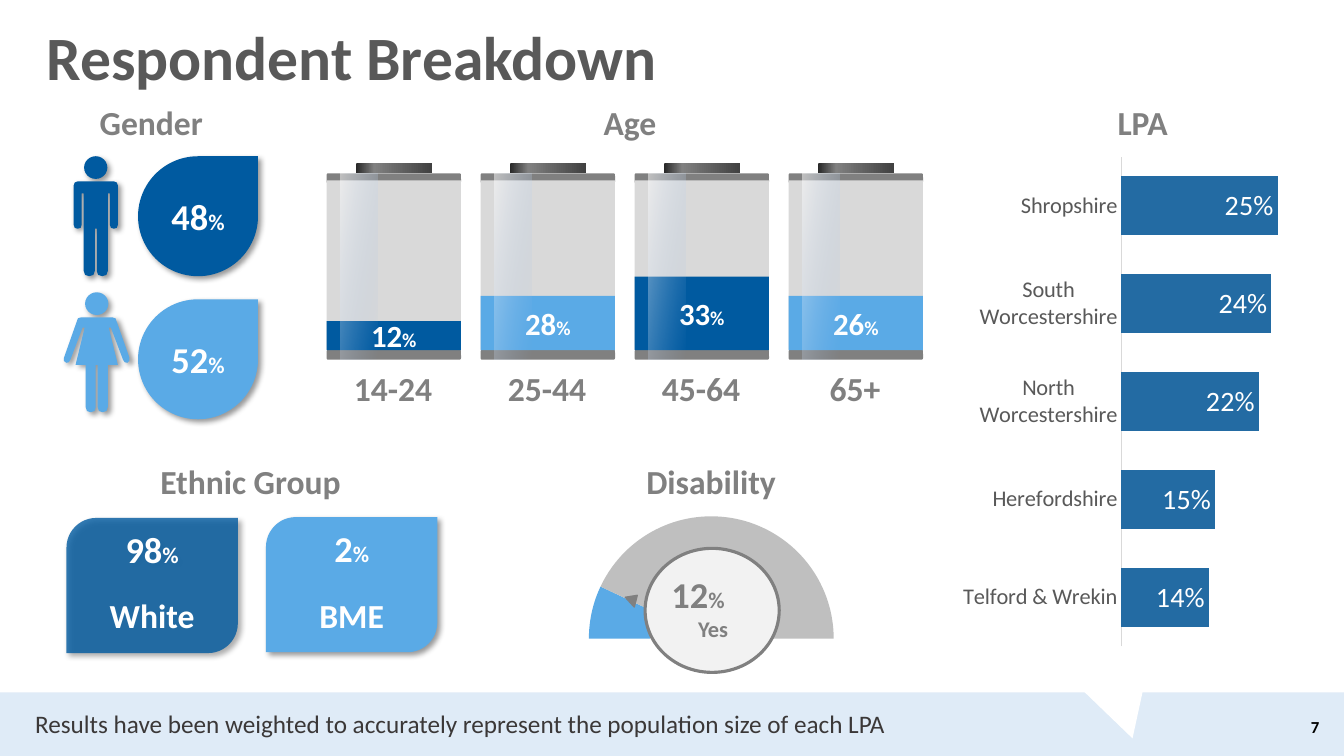
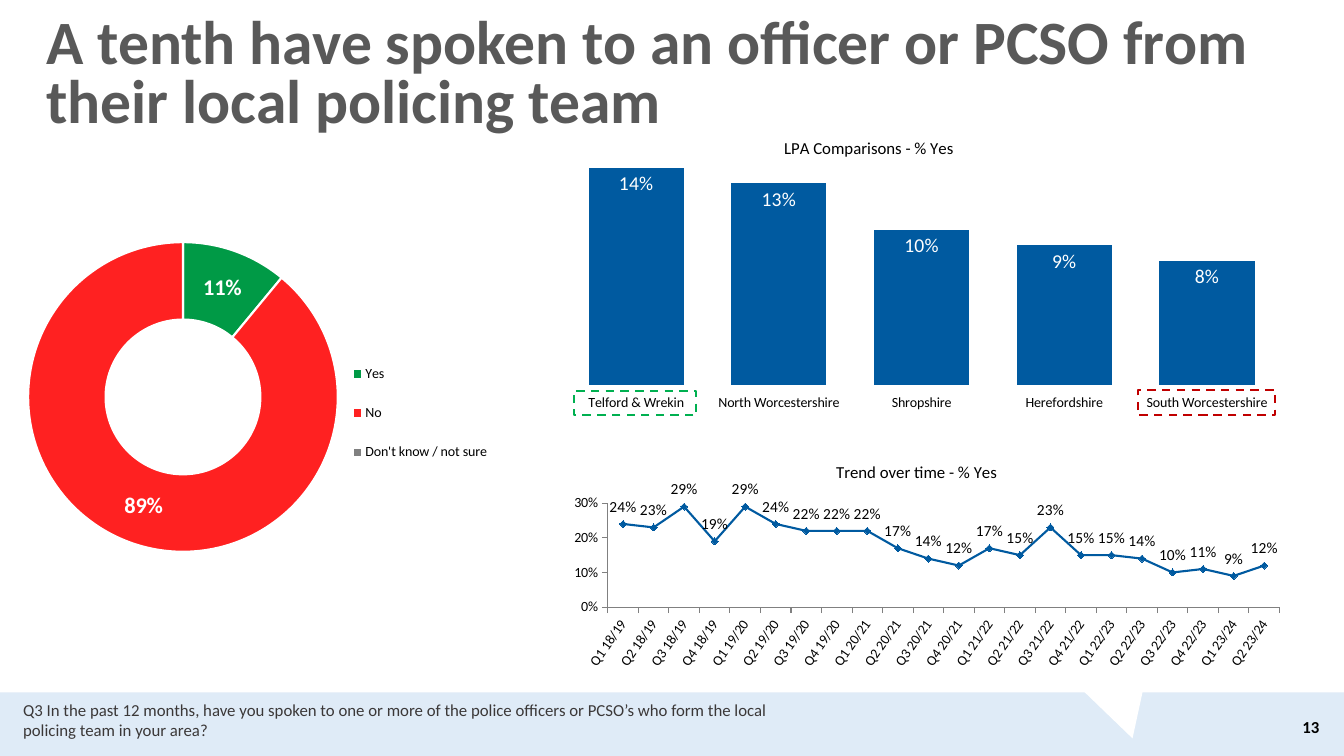
"""Build the two survey slides: respondent breakdown and local contact."""
from lxml.etree import SubElement
from pptx import Presentation
from pptx.chart.data import CategoryChartData
from pptx.dml.color import RGBColor
from pptx.enum.chart import XL_CHART_TYPE as CHART
from pptx.enum.chart import XL_LABEL_POSITION as SPOT
from pptx.enum.chart import XL_LEGEND_POSITION, XL_MARKER_STYLE
from pptx.enum.chart import XL_TICK_MARK as TICK
from pptx.enum.dml import MSO_LINE
from pptx.enum.shapes import MSO_SHAPE as SHAPE
from pptx.enum.text import MSO_ANCHOR, MSO_AUTO_SIZE, PP_ALIGN
from pptx.oxml.ns import qn
from pptx.util import Pt

FONT = "Calibri"
HEX = {
    "navy": "005AA0", "sky": "5AAAE6", "steel": "236BA3", "band": "DFEBF7",
    "grey": "808080", "slate": "595959", "ink": "3B3838", "silver": "BFBFBF",
    "pale": "D9D9D9", "mist": "F2F2F2", "white": "FFFFFF", "black": "000000",
    "yes": "009A46", "no": "FF2121", "best": "00B050", "worst": "C00000",
    "coal": "262626", "soot": "404040", "glass": "8EB4E3",
}
MAN = [(13, 0), (15, 0.8), (15.8, 2.9), (15.8, 31), (15, 33.2), (13, 33.8),
       (10.8, 33.2), (10.1, 31), (10.1, 8.6), (8.6, 8.6), (8.6, 64),
       (7.6, 66.8), (4.7, 67.7), (1.7, 66.8), (0.7, 64), (0.7, 33.8)]
WOMAN = [(11.5, 0), (13.4, 0.6), (14, 2.2), (23.4, 28.8), (23.4, 31),
         (21.8, 32.4), (20, 32), (18.8, 30.2), (10.1, 7.2), (8.6, 7.2),
         (15.1, 33.8), (7.9, 33.8), (7.9, 64), (7, 66.8), (4.3, 67.7),
         (1.5, 66.8), (0.7, 64), (0.7, 33.8)]


def tint(name):
    return RGBColor.from_string(HEX[name])


def style(font, size, color="black", bold=False):
    font.name, font.size, font.bold = FONT, Pt(size), bold
    font.color.rgb = tint(color)


def write(frame, text, size=24, color="grey", bold=True, small=None,
          align=PP_ALIGN.CENTER, anchor=MSO_ANCHOR.MIDDLE, pad=None, lead=None):
    frame.word_wrap = True
    frame.auto_size = MSO_AUTO_SIZE.NONE
    frame.vertical_anchor = anchor
    if pad is not None:
        frame.margin_left = frame.margin_right = Pt(pad)
        frame.margin_top = frame.margin_bottom = Pt(pad)
    para = frame.paragraphs[0]
    para.alignment = align
    if lead:
        para.line_spacing = lead
    parts = [(text.rstrip("%"), size), ("%", small)] if small else [(text, size)]
    for words, points in parts:
        run = para.add_run()
        run.text = words
        style(run.font, points, color, bold)


def blend(shape, stops, angle):
    shape.fill.gradient()
    grad = shape.element.spPr.find(qn("a:gradFill"))
    stop_list = grad.find(qn("a:gsLst"))
    for old in list(stop_list):
        stop_list.remove(old)
    for at, color, alpha in stops:
        stop = SubElement(stop_list, qn("a:gs"), pos=str(at * 1000))
        hue = SubElement(stop, qn("a:srgbClr"), val=HEX[color])
        SubElement(hue, qn("a:alpha"), val=str(alpha * 1000))
    grad.find(qn("a:lin")).set("ang", str(angle * 60000))


def place(node, spot, index=0, inner=False):
    layout = node.find(qn("c:layout"))
    if layout is None:
        layout = SubElement(node, qn("c:layout"))
        node.insert(index, layout)
    manual = SubElement(layout, qn("c:manualLayout"))
    if inner:
        SubElement(manual, qn("c:layoutTarget"), val="inner")
    for key in ("xMode", "yMode"):
        SubElement(manual, qn("c:" + key), val="edge")
    for key, value in zip("xywh", spot):
        SubElement(manual, qn("c:" + key), val=str(value))


def label(chart, size, color="black", bold=False, spot=None):
    tags = chart.plots[0].series[0].data_labels
    tags.show_value = True
    tags.number_format, tags.number_format_is_linked = "0%;;;", False
    style(tags.font, size, color, bold)
    if spot is not None:
        tags.position = spot


def axes(chart, top, size=10, color="black", line=None, hide=True,
         tick=TICK.OUTSIDE):
    cats, vals = chart.category_axis, chart.value_axis
    vals.visible = not hide
    vals.has_major_gridlines = False
    vals.minimum_scale, vals.maximum_scale = 0, top
    cats.major_tick_mark = tick
    style(cats.tick_labels.font, size, color)
    if line:
        cats.format.line.color.rgb = tint(line)
        cats.format.line.width = Pt(0.75)
    else:
        cats.format.line.fill.background()


def head(chart, text, spot=None):
    chart.has_title = True
    title = chart.chart_title
    run = title.text_frame.paragraphs[0].add_run()
    run.text = text
    style(run.font, 12)
    if spot:
        place(chart.element.xpath(".//c:chart/c:title")[0], spot, 1)


class Deck:
    def __init__(self):
        self.file = Presentation()
        self.file.slide_width, self.file.slide_height = Pt(960), Pt(540)
        self.layout = self.file.slide_layouts[5]
        self.slide = None

    def base(self):
        band = self.form(SHAPE.RECTANGLE, (0, 494.6, 960, 45.4), "band")
        notch = self.form(SHAPE.ISOSCELES_TRIANGLE, (774, 478.8, 55.4, 49.7),
                          "white", turn=163.1)
        for number, part in enumerate((band, notch), 90):
            part.element.xpath(".//p:cNvPr")[0].set("id", str(number))
            self.layout.shapes.element.append(part.element)

    def page(self, title, box, number, note, note_box, note_size, lead):
        first = self.slide is None
        self.slide = self.file.slides.add_slide(self.layout)
        if first:
            self.base()
        holder = self.slide.shapes.title
        holder.left, holder.top, holder.width, holder.height = map(Pt, box)
        write(holder.text_frame, title, 44, "slate", align=PP_ALIGN.LEFT, lead=lead)
        self.text(number, (908.6, 504.7, 41, 28.8), size=12, color="black",
                  align=PP_ALIGN.RIGHT)
        self.text(note, note_box, size=note_size, color="ink", bold=False,
                  align=PP_ALIGN.LEFT, anchor=MSO_ANCHOR.TOP)

    def text(self, text, box, **look):
        frame = self.slide.shapes.add_textbox(*map(Pt, box)).text_frame
        write(frame, text, **look)

    def paint(self, shape, fill=None, line=None, width=1, shade=False, alpha=None):
        if fill:
            shape.fill.solid()
            shape.fill.fore_color.rgb = tint(fill)
        else:
            shape.fill.background()
        if alpha:
            hue = shape.element.spPr.find(qn("a:solidFill"))[0]
            SubElement(hue, qn("a:alpha"), val=str(alpha * 1000))
        if line:
            shape.line.color.rgb = tint(line)
            shape.line.width = Pt(width)
        else:
            shape.line.fill.background()
        shape.shadow.inherit = False
        if shade:
            effects = shape.element.spPr.find(qn("a:effectLst"))
            cast = SubElement(effects, qn("a:outerShdw"), blurRad=str(Pt(4)),
                              dist=str(Pt(3)), dir="2700000", algn="tl",
                              rotWithShape="0")
            hue = SubElement(cast, qn("a:srgbClr"), val=HEX["black"])
            SubElement(hue, qn("a:alpha"), val="40000")

    def form(self, kind, box, fill=None, turn=0, **look):
        shape = self.slide.shapes.add_shape(kind, *map(Pt, box))
        shape.rotation = turn
        self.paint(shape, fill, **look)
        return shape

    def person(self, mid, top, half, color):
        self.form(SHAPE.OVAL, (mid - 8.3, top - 18, 16.6, 16.2), color, shade=True)
        outline = half + [(-x, y) for x, y in reversed(half)]
        points = [(Pt(mid + x), Pt(top + y)) for x, y in outline]
        draw = self.slide.shapes.build_freeform(*points[0])
        draw.add_line_segments(points[1:], close=True)
        self.paint(draw.convert_to_shape(), color, shade=True)

    def battery(self, left, share, ages, height, color):
        bar, box = SHAPE.ROUNDED_RECTANGLE, SHAPE.RECTANGLE
        self.form(bar, (left, 123.8, 96, 7.2), "grey")
        self.form(box, (left, 128.9, 96, 120.9), "pale")
        self.form(bar, (left, 249.8, 96, 7.2), "grey")
        cap = self.form(bar, (left + 20.9, 116.6, 54.7, 7.2))
        blend(cap, [(0, "coal", 100), (24, "grey", 100), (100, "soot", 100)], 0)
        level = self.form(box, (left, 250.2 - height, 96, height), color)
        write(level.text_frame, share, 22, "white", small=14)
        glass = self.form(box, (left + 10, 123.8, 26.6, 133.2))
        blend(glass, [(0, "white", 51), (100, "glass", 0)], 10)
        self.text(ages, (left, 241.2, 95, 71.3))

    def chart(self, kind, box, cats, vals, spot, colors, line=None):
        data = CategoryChartData()
        data.categories = cats
        data.add_series("Series 1", vals)
        chart = self.slide.shapes.add_chart(kind, *map(Pt, box), data).chart
        chart.has_legend = chart.has_title = False
        style(chart.font, 10)
        place(chart.element.xpath(".//c:plotArea")[0], spot, inner=True)
        plot = chart.plots[0]
        series = plot.series[0]
        if kind == CHART.DOUGHNUT:
            for index, color in enumerate(colors):
                self.tone(series.points[index].format, color, line)
        else:
            plot.vary_by_categories = False
            if kind != CHART.LINE_MARKERS:
                self.tone(series.format, colors)
        return chart

    def tone(self, form, color, line=None):
        if color:
            form.fill.solid()
            form.fill.fore_color.rgb = tint(color)
        else:
            form.fill.background()
        if line:
            form.line.color.rgb = tint(line)
            form.line.width = Pt(1.5)
        else:
            form.line.fill.background()


def profile(deck):
    deck.page("Respondent Breakdown", (25.9, 12.2, 909.4, 62.6), "7",
              "Results have been weighted to accurately represent the population "
              "size of each LPA", (18, 502.6, 658.8, 28.8), 18, 0.9)
    for text, left, top, width in [
            ("Gender", 25.9, 67, 164.2), ("Age", 291.6, 67, 316.8),
            ("LPA", 697.7, 67, 236.9), ("Ethnic Group", 45.4, 323.3, 267.1),
            ("Disability", 374.4, 323.3, 267.1)]:
        deck.text(text, (left, top, width, 41))
    deck.person(68.4, 129.6, MAN, "navy")
    deck.person(69.1, 226.8, WOMAN, "sky")
    for share, top, color in [("48%", 111.6, "navy"), ("52%", 213.8, "sky")]:
        drop = deck.form(SHAPE.TEAR, (98.6, top, 85.7, 85.7), color, shade=True)
        write(drop.text_frame, share, 26, "white", small=16, pad=0)
    for index, cell in enumerate([
            ("12%", "14-24", 20.9, "navy"), ("28%", "25-44", 38.9, "sky"),
            ("33%", "45-64", 52.6, "navy"), ("26%", "65+", 38.9, "sky")]):
        deck.battery(233.3 + 110 * index, *cell)
    for share, group, left, top, color, alpha in [
            ("98%", "White", 47.5, 370, "navy", 80),
            ("2%", "BME", 190, 369.4, "sky", None)]:
        card = deck.form(SHAPE.ROUND_2_DIAG_RECTANGLE, (left, top, 122.4, 96.5),
                         color, shade=True, alpha=alpha)
        card.adjustments[0] = 0.22
        write(card.text_frame, share, 26, "white", small=16, pad=0,
              anchor=MSO_ANCHOR.TOP)
        deck.text(group, (left, 413.3, 122.4, 52.6), color="white")
    ring = deck.chart(CHART.DOUGHNUT, (380.9, 364.3, 265, 185.8), "123",
                      (7, 43, 50), (0.15, 0, 0.66, 0.99), ("sky", "silver", None))
    ring.element.xpath(".//c:firstSliceAng")[0].set("val", "270")
    ring.element.xpath(".//c:holeSize")[0].set("val", "85")
    deck.form(SHAPE.OVAL, (460.8, 391.7, 95.8, 88.6), "mist", line="grey", width=2.25)
    deck.form(SHAPE.ISOSCELES_TRIANGLE, (447.8, 424.1, 9.4, 7.2), "grey",
              turn=47.7, line="grey")
    deck.text("12%", (450, 404, 97.2, 41), size=26, small=16)
    deck.text("Yes", (460.8, 434, 97.2, 30), size=16)
    bars = deck.chart(CHART.BAR_CLUSTERED, (687.6, 100.8, 257.8, 372.2),
                      ("Telford & Wrekin", "Herefordshire", "North Worcestershire",
                       "South Worcestershire", "Shropshire"),
                      (0.14, 0.15, 0.22, 0.24, 0.25), (0.44, 0.03, 0.52, 0.94), "steel")
    bars.plots[0].gap_width = 67
    axes(bars, 0.3, 16, "slate", "pale", tick=TICK.NONE)
    label(bars, 20, "white", spot=SPOT.INSIDE_END)


def contact(deck):
    deck.page("A tenth have spoken to an officer or PCSO from their local policing team",
              (25.9, 5.8, 923.8, 97.2), "13",
              "Q3 In the past 12 months, have you spoken to one or more of the police "
              "officers or PCSO’s who form the local policing team in your area?",
              (9.4, 496.1, 562.3, 36), 12, 0.8)
    ring = deck.chart(CHART.DOUGHNUT, (13.2, 152.9, 345.6, 287.3),
                      ("Yes", "No", "Don't know / not sure"), (0.11, 0.89, 0),
                      (0.02, 0.07, 0.64, 0.77), ("yes", "no", "grey"), "white")
    label(ring, 16, "white", True)
    ring.has_legend = True
    ring.legend.position = XL_LEGEND_POSITION.RIGHT
    ring.legend.include_in_layout = False
    style(ring.legend.font, 10)
    place(ring.element.xpath(".//c:legend")[0], (0.68, 0.32, 0.3, 0.35), 1)

    bars = deck.chart(CHART.COLUMN_CLUSTERED, (403.5, 95.8, 514.8, 213.1),
                      ("Telford & Wrekin", "North Worcestershire", "Shropshire",
                       "Herefordshire", "South Worcestershire"),
                      (0.14, 0.13, 0.1, 0.09, 0.08), (0, 0.01, 0.99, 0.83), "navy")
    bars.plots[0].gap_width = 50
    axes(bars, 0.16)
    label(bars, 14, "white", spot=SPOT.INSIDE_END)
    head(bars, "LPA Comparisons - % Yes", (0.3, 0))
    for box, color in [((409.7, 279.4, 87.8, 17.3), "best"),
                       ((812.9, 278.6, 97.9, 18), "worst")]:
        frame = deck.form(SHAPE.RECTANGLE, box, line=color, width=1.5)
        frame.line.dash_style = MSO_LINE.DASH

    terms = [f"Q{part} {year}/{year + 1}" for year in range(18, 24)
             for part in range(1, 5)][:22]
    trend = deck.chart(CHART.LINE_MARKERS, (379, 319.7, 551.5, 172.8), terms,
                       (0.24, 0.23, 0.29, 0.19, 0.29, 0.24, 0.22, 0.22, 0.22, 0.17, 0.14,
                        0.12, 0.17, 0.15, 0.23, 0.15, 0.15, 0.14, 0.1, 0.11, 0.09, 0.12),
                       (0.1, 0.23, 0.87, 0.43), "navy")
    axes(trend, 0.3, line="grey", hide=False)
    trend.element.xpath(".//c:catAx/c:txPr/a:bodyPr")[0].set("rot", "-3300000")
    scale = trend.value_axis
    scale.major_unit = 0.1
    scale.format.line.color.rgb = tint("grey")
    scale.tick_labels.number_format = "0%"
    scale.tick_labels.number_format_is_linked = False
    series = trend.plots[0].series[0]
    series.smooth = False
    series.format.line.color.rgb = tint("navy")
    series.format.line.width = Pt(1.5)
    series.marker.style, series.marker.size = XL_MARKER_STYLE.DIAMOND, 5
    deck.tone(series.marker.format, "navy")
    label(trend, 11, spot=SPOT.ABOVE)
    head(trend, "Trend over time - % Yes")


def main():
    deck = Deck()
    profile(deck)
    contact(deck)
    deck.file.save("out.pptx")


if __name__ == "__main__":
    main()
